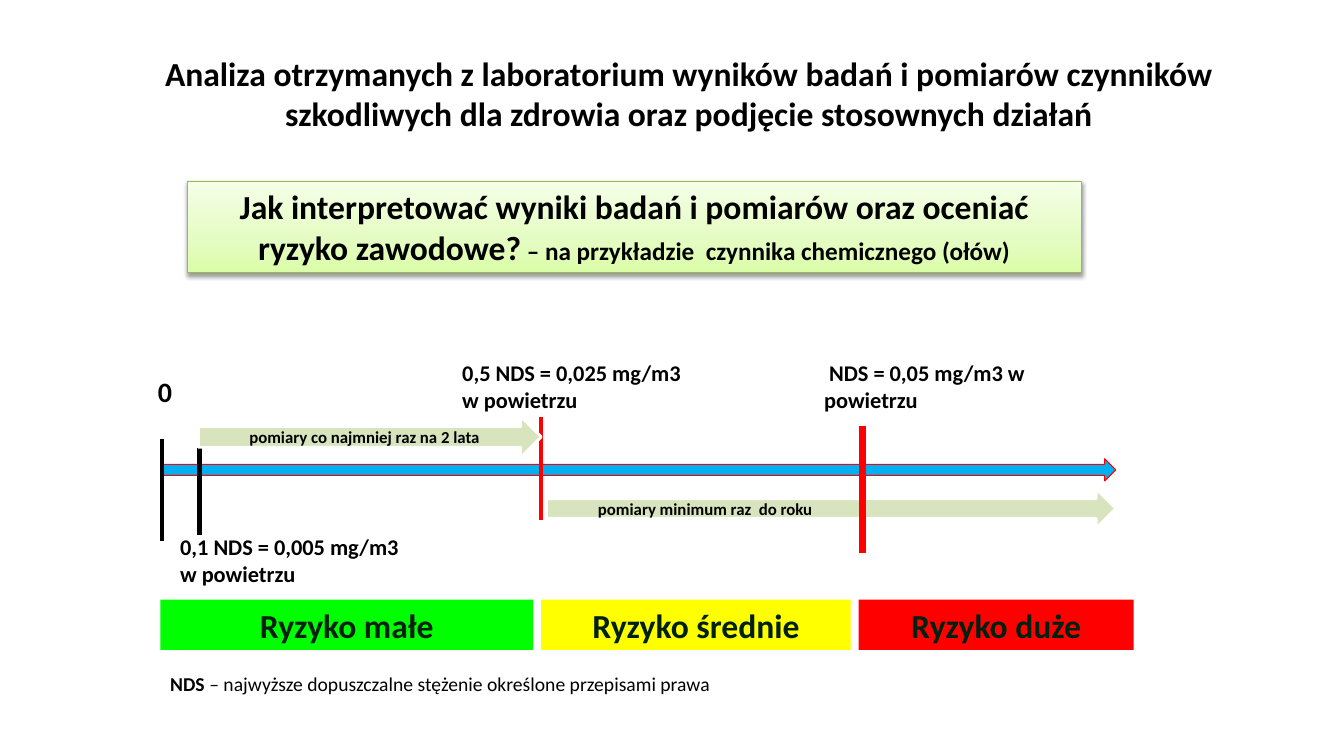
"""Build a slide on interpreting exposure measurements and occupational risk."""
import copy

import pptx
import pptx.dml.color
import pptx.enum.shapes
import pptx.enum.text
import pptx.oxml
import pptx.oxml.ns
import pptx.util

Cm, Pt = pptx.util.Cm, pptx.util.Pt
SHAPE = pptx.enum.shapes.MSO_SHAPE
ALIGN = pptx.enum.text.PP_ALIGN
ANCHOR = pptx.enum.text.MSO_ANCHOR
NS = 'xmlns:a="http://schemas.openxmlformats.org/drawingml/2006/main"'


def rgb(color):
    """Turn a hex string into a colour."""
    return pptx.dml.color.RGBColor.from_string(color)


def write(s, runs, size, align=ALIGN.LEFT, anchor=ANCHOR.TOP, color="000000"):
    """Fill a shape with one paragraph of (text, bold, size or None) runs."""
    tf = s.text_frame
    tf.word_wrap = True
    tf.vertical_anchor = anchor
    p = tf.paragraphs[0]
    p.alignment = align
    p.font.name, p.font.size = "Calibri", Pt(size)
    p.font.color.rgb = rgb(color)
    for text, bold, run_size in runs:
        r = p.add_run()
        r.text = text
        r.font.bold = bold
        if run_size:
            r.font.size = Pt(run_size)


prs = pptx.Presentation()
prs.slide_width, prs.slide_height = Cm(33.87), Cm(19.05)
slide = prs.slides.add_slide(prs.slide_layouts[5])
shapes = slide.shapes

title = shapes.title
title.left, title.top, title.width, title.height = Cm(2.54), Cm(0.76), Cm(29.64), Cm(3.18)
write(title, [("Analiza otrzymanych z laboratorium wyników badań i pomiarów czynników "
               "szkodliwych dla zdrowia oraz podjęcie stosownych działań", True, None)],
      24, ALIGN.CENTER, ANCHOR.MIDDLE)

heading = shapes.add_shape(SHAPE.RECTANGLE, Cm(4.72), Cm(4.57), Cm(22.53), Cm(2.31))
heading.line.color.rgb = rgb("98B955")
heading.line.width = Pt(0.75)
heading.fill.gradient()
heading.fill.gradient_angle = 90
first_stop = heading._element.spPr.find(".//" + pptx.oxml.ns.qn("a:gs"))
first_stop.addnext(copy.deepcopy(first_stop))
stops = [(0, "DAFDA7"), (0.35, "E4FCC2"), (1, "F5FFE7")]
for stop, (position, color) in zip(heading.fill.gradient_stops, stops):
    stop.position = position
    stop.color.rgb = rgb(color)
heading._element.spPr.append(pptx.oxml.parse_xml(
    f'<a:effectLst {NS}><a:outerShdw blurRad="40000" dist="20000" dir="5400000" '
    'rotWithShape="0"><a:srgbClr val="000000"><a:alpha val="38000"/></a:srgbClr>'
    '</a:outerShdw></a:effectLst>'))
write(heading, [("Jak interpretować wyniki badań i pomiarów oraz oceniać ryzyko zawodowe?", True, None),
                (" – na przykładzie  czynnika chemicznego (ołów)", True, 18)], 24, ALIGN.CENTER)

left, gap = 4.04, 0.2
for name, width, color in [("małe", 9.4, "00FF00"), ("średnie", 7.8, "FFFF00"),
                           ("duże", 6.93, "FF0000")]:
    s = shapes.add_shape(SHAPE.RECTANGLE, Cm(left), Cm(15.11), Cm(width), Cm(1.27))
    s.shadow.inherit = False
    s.fill.solid()
    s.fill.fore_color.rgb = rgb(color)
    s.line.fill.background()
    write(s, [("Ryzyko " + name, True, None)], 24, ALIGN.CENTER, color="002010")
    left += width + gap

arrows = [
    (4.09, 11.56, 24.03, 0.56, "00B0F0", "FF0000", 0.75, "", ALIGN.LEFT, 0.25),
    (13.77, 12.32, 14.35, 0.99, "D7E4BD", "FFFFFF", 2,
     "pomiary minimum raz  do roku", ALIGN.LEFT, 1.3),
    (5, 10.49, 8.64, 1.04, "D7E4BD", "FFFFFF", 2,
     "pomiary co najmniej raz na 2 lata", ALIGN.CENTER, 0.25),
]
for x, y, width, height, fill, line, weight, text, align, margin in arrows:
    s = shapes.add_shape(SHAPE.RIGHT_ARROW, Cm(x), Cm(y), Cm(width), Cm(height))
    s.shadow.inherit = False
    s.fill.solid()
    s.fill.fore_color.rgb = rgb(fill)
    s.line.color.rgb = rgb(line)
    s.line.width = Pt(weight)
    s.text_frame.margin_left = Cm(margin)
    if text:
        write(s, [(text, True, None)], 12, align, ANCHOR.MIDDLE)
upper_arrow = s

for x, top, bottom, color, weight in [
    (4.09, 11.05, 13.64, "000000", 3),
    (5.03, 11.3, 13.49, "000000", 3),
    (13.64, 10.52, 13.11, "FF0000", 3),
    (21.74, 10.74, 13.94, "FF0000", 4.5),
]:
    s = shapes.add_connector(pptx.enum.shapes.MSO_CONNECTOR.STRAIGHT,
                             Cm(x), Cm(top), Cm(x), Cm(bottom))
    s.line.color.rgb = rgb(color)
    s.line.width = Pt(weight)
    s._element.spPr.append(pptx.oxml.parse_xml(f"<a:effectLst {NS}/>"))
s._element.addnext(upper_arrow._element)

for x, y, width, height, size, runs in [
    (3.73, 9.32, 0.97, 1.12, 20, [("0", True, None)]),
    (4.29, 13.31, 6.15, 1.63, 16, [("0,1 NDS = 0,005 mg/m3 w powietrzu", True, None)]),
    (11.4, 8.92, 6.25, 1.63, 16, [("0,5 NDS = 0,025 mg/m3 w powietrzu", True, None)]),
    (20.52, 8.92, 5.72, 1.63, 16, [(" NDS = 0,05 mg/m3 w powietrzu", True, None)]),
    (4.04, 16.81, 27.1, 0.86, 14,
     [("NDS ", True, None),
      ("– najwyższe dopuszczalne stężenie określone przepisami prawa", False, None)]),
]:
    write(shapes.add_textbox(Cm(x), Cm(y), Cm(width), Cm(height)), runs, size)

prs.save("out.pptx")
